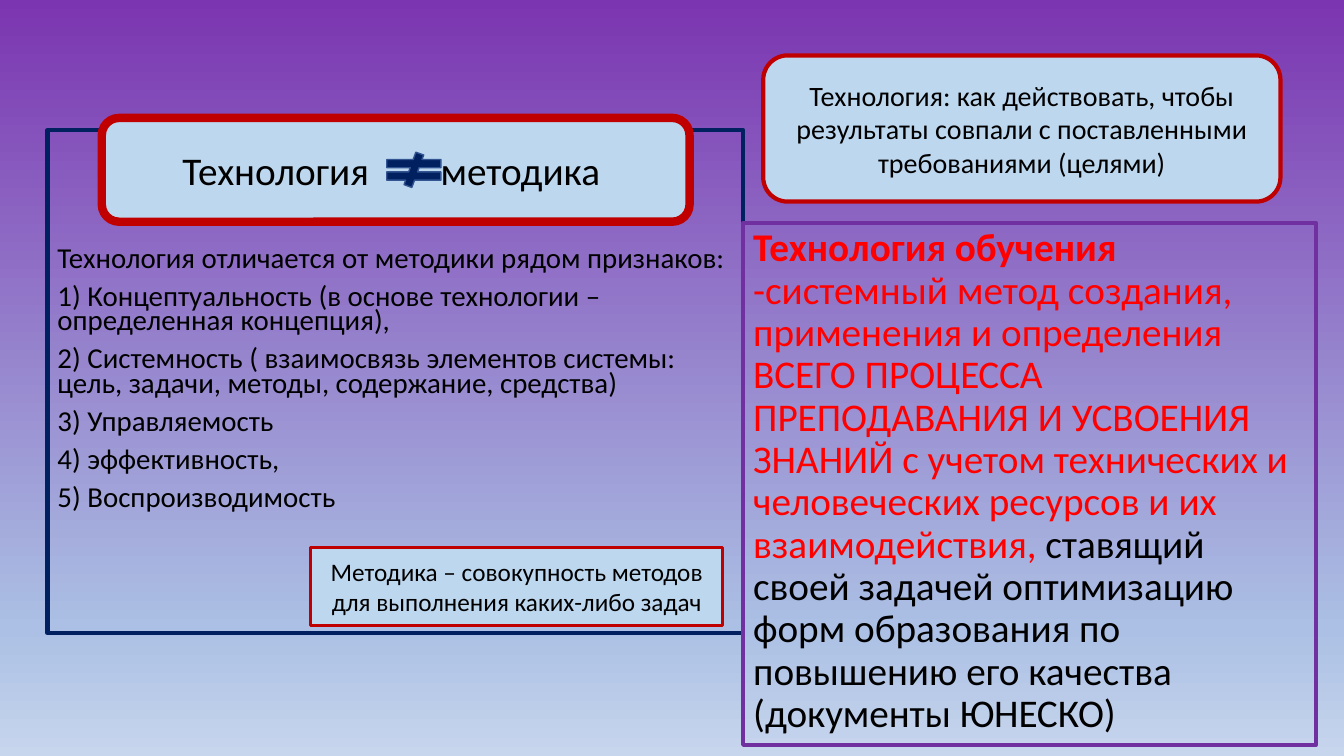
import copy

import lxml.etree
import pptx
import pptx.dml.color
import pptx.enum.shapes
import pptx.enum.text
import pptx.oxml.ns
import pptx.util

Inches, Pt = pptx.util.Inches, pptx.util.Pt
RGB = pptx.dml.color.RGBColor.from_string
SHAPE = pptx.enum.shapes.MSO_SHAPE
ALIGN = pptx.enum.text.PP_ALIGN
qn = pptx.oxml.ns.qn

COLORS = {
    "navy": "002060", "purple": "7030A0", "red": "FF0000", "dark red": "C00000",
    "pale blue": "BDD7EE", "blue": "325491", "black": "000000",
}


def place(sp, box, line, width):
    sp.left, sp.top, sp.width, sp.height = (Inches(v) for v in box)
    sp.line.color.rgb = RGB(COLORS[line])
    sp.line.width = Pt(width)


def add_run(p, text, size, color="black", bold=False):
    r = p.add_run()
    r.text = text
    for name, value in {"name": "Calibri", "size": Pt(size), "bold": bold}.items():
        setattr(r.font, name, value)
    r.font.color.rgb = RGB(COLORS[color])


prs = pptx.Presentation()
prs.slide_width, prs.slide_height = Inches(13.33), Inches(7.5)
s = prs.slides.add_slide(prs.slide_layouts[3])
title = s.shapes.title.element
title.getparent().remove(title)

# Background gradient
fill = s.background.fill
fill.gradient()
fill.gradient_angle = 270
stops = next(s.element.iter(qn("a:gsLst")))
stops.append(copy.deepcopy(stops[-1]))
for stop, (position, color) in zip(
        fill.gradient_stops, [(0, "7B35B0"), (0.83, "ABC0E4"), (1, "C7D5ED")]):
    stop.position = position
    stop.color.rgb = RGB(color)

# Body text: each paragraph is a list of (text, colour, bold) runs
features = [
    "Технология отличается от методики рядом признаков:",
    "1) Концептуальность (в основе технологии – определенная концепция),",
    "2) Системность ( взаимосвязь элементов системы: цель, задачи, методы, содержание, средства)",
    "3) Управляемость",
    "4) эффективность,",
    "5) Воспроизводимость",
]
definition = [
    ("Технология обучения ", "red", True),
    ("-системный метод создания, применения и определения ВСЕГО ПРОЦЕССА "
     "ПРЕПОДАВАНИЯ И УСВОЕНИЯ ЗНАНИЙ с учетом технических и человеческих "
     "ресурсов и их взаимодействия, ", "red", False),
    ("ставящий своей задачей оптимизацию форм образования по повышению его "
     "качества (документы ЮНЕСКО)", "black", False),
]
bodies = [
    (1, (0.47, 1.29, 6.9, 4.99), "navy", 1.18, 0.7, 20.6,
     [[(text, "black", False)] for text in features]),
    (2, (7.37, 2.21, 5.68, 5.18), "purple", 0.05, 0.9, 28, [definition]),
]
for idx, box, line, top, spacing, size, paragraphs in bodies:
    sp = s.placeholders[idx]
    place(sp, box, line, 3)
    tf = sp.text_frame
    tf.auto_size = pptx.enum.text.MSO_AUTO_SIZE.NONE
    tf.vertical_anchor = pptx.enum.text.MSO_ANCHOR.TOP
    tf.margin_top = Inches(top)
    for i, runs in enumerate(paragraphs):
        p = tf.add_paragraph() if i else tf.paragraphs[0]
        p.line_spacing, p.space_before = spacing, Pt(10)
        pPr = p._p.get_or_add_pPr()
        pPr.set("marL", "0")
        pPr.set("indent", "0")
        lxml.etree.SubElement(pPr, qn("a:buNone"))
        for text, color, bold in runs:
            add_run(p, text, size, color, bold)

# Callouts, heading and the sign inside it
ROUND = SHAPE.ROUNDED_RECTANGLE
shapes = [
    (ROUND, (7.57, 0.55, 5.13, 1.45), "pale blue", "dark red", 3, 20,
     "Технология: как действовать, чтобы результаты совпали с поставленными требованиями (целями)"),
    (ROUND, (1.01, 1.17, 5.83, 1.03), "pale blue", "dark red", 6, 28, "Технология\tметодика"),
    (SHAPE.MATH_NOT_EQUAL, (3.74, 1.51, 0.73, 0.35), "navy", "blue", 1, None, ""),
    (SHAPE.RECTANGLE, (3.08, 5.43, 4.09, 0.78), "pale blue", "dark red", 2.25, 18,
     "Методика – совокупность методов для выполнения каких-либо задач"),
]
for kind, box, color, line, width, size, text in shapes:
    sp = s.shapes.add_shape(kind, *(Inches(v) for v in box))
    place(sp, box, line, width)
    sp.shadow.inherit = False
    sp.fill.solid()
    sp.fill.fore_color.rgb = RGB(COLORS[color])
    if not text:
        continue
    tf = sp.text_frame
    tf.word_wrap = True
    tf.vertical_anchor = pptx.enum.text.MSO_ANCHOR.MIDDLE
    p = tf.paragraphs[0]
    p.alignment = ALIGN.CENTER
    add_run(p, text, size)
    if "\t" in text:
        # A tab stop leaves room for the sign between the two words
        p.alignment = ALIGN.LEFT
        tf.margin_left = Inches(0.75)
        tabs = lxml.etree.SubElement(p._p.get_or_add_pPr(), qn("a:tabLst"))
        lxml.etree.SubElement(tabs, qn("a:tab"), pos=str(Inches(2.56)), algn="l")

prs.save("out.pptx")
